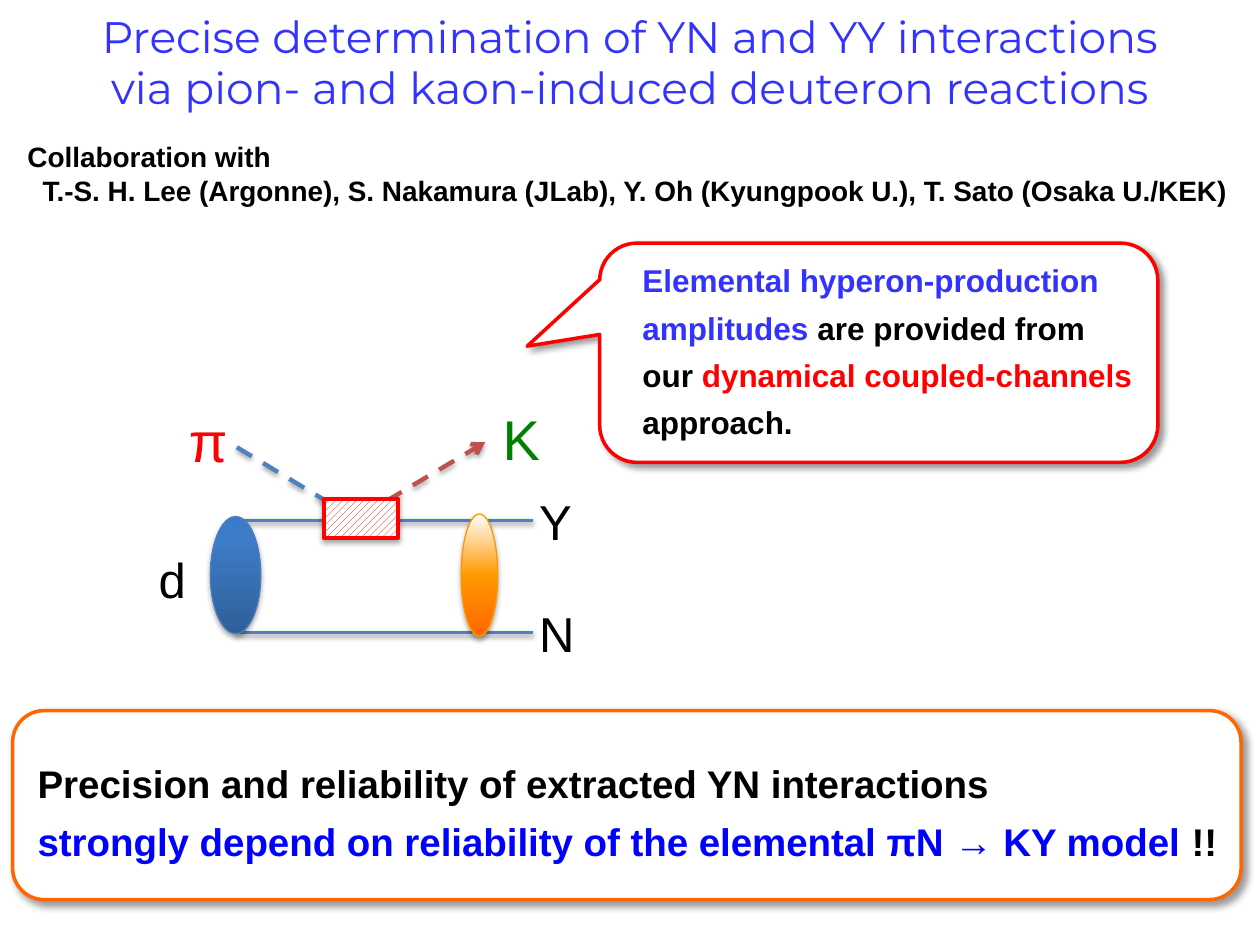
from copy import deepcopy

from lxml.etree import SubElement
from pptx import Presentation
from pptx.dml.color import RGBColor
from pptx.enum.dml import MSO_LINE, MSO_PATTERN
from pptx.enum.shapes import MSO_CONNECTOR, MSO_SHAPE
from pptx.enum.text import MSO_ANCHOR, MSO_AUTO_SIZE, PP_ALIGN
from pptx.oxml.ns import qn
from pptx.util import Emu, Inches, Pt

BLACK, WHITE, RED = "000000", "FFFFFF", "FF0000"
INDIGO, BLUE, GREEN = "3333FF", "0000FF", "008000"
ORANGE, AMBER = "FF6600", "FF9900"
STEEL, BRICK = "4F81BD", "C0504D"

TITLE = [[("Precise determination of YN and YY interactions\n"
           "via pion- and kaon-induced deuteron reactions", INDIGO)]]
COLLABORATORS = [
    [("Collaboration with", BLACK)],
    [("T.-S. H. Lee (Argonne), S. Nakamura (JLab), Y. Oh (Kyungpook U.), "
      "T. Sato (Osaka U./KEK)", BLACK)],
]
AMPLITUDES = [
    [("Elemental hyperon-production", INDIGO)],
    [("amplitudes ", INDIGO), ("are provided from", BLACK)],
    [("our ", BLACK), ("dynamical coupled-channels", RED)],
    [("approach.", BLACK)],
]
CONCLUSION = [
    [("Precision and reliability of extracted YN interactions", BLACK)],
    [("strongly depend on reliability of the elemental πN → KY model", BLUE),
     (" !!", BLACK)],
]
PARTICLES = [
    ("Y", (4.18, 3.85, 0.46, 0.57), 28, BLACK),
    ("N", (4.18, 4.74, 0.49, 0.57), 28, BLACK),
    ("d", (1.16, 4.31, 0.42, 0.57), 28, BLACK),
    ("K", (3.89, 3.16, 0.5, 0.64), 32, GREEN),
    ("π", (1.4, 3.18, 0.45, 0.64), 32, RED),
]
BARYON_LEVELS = (4.13, 5.02)
BARYON_START, BARYON_END = 1.87, 4.23
PION_PATH = (1.88, 3.55, 2.86, 4.14)
KAON_PATH = (2.86, 4.1, 3.85, 3.51)
DEUTERON_STOPS = [(0, "2F5F99"), (80, "3D7CC7"), (100, "3A7CCB")]
RESCATTERING_STOPS = [(0, ORANGE), (50, AMBER), (100, WHITE)]

PANEL_SHADOW = dict(alpha=40, blur=4, distance=3, angle=45)
LINE_SHADOW = dict(alpha=38, blur=3.1, distance=1.6, angle=90)
VERTEX_SHADOW = dict(alpha=35, blur=3.1, distance=1.8, angle=90)

deck = Presentation()
deck.slide_width, deck.slide_height = Inches(10), Inches(7.5)
slide = deck.slides.add_slide(deck.slide_layouts[5])


def color(code):
    return RGBColor.from_string(code)


def place(item, box):
    item.left, item.top, item.width, item.height = map(Inches, box)


def add_shadow(item, alpha, blur, distance, angle):
    effects = SubElement(item._element.spPr, qn("a:effectLst"))
    shadow = SubElement(effects, qn("a:outerShdw"), blurRad=str(Pt(blur)),
                        dist=str(Pt(distance)), dir=str(angle * 60000), rotWithShape="0")
    tone = SubElement(shadow, qn("a:srgbClr"), val=BLACK)
    SubElement(tone, qn("a:alpha"), val=str(alpha * 1000))


def write(frame, paragraphs, size, font="Arial", bold=False, spacing=None,
          align=PP_ALIGN.LEFT, indents=()):
    for index, runs in enumerate(paragraphs):
        paragraph = frame.paragraphs[0] if index == 0 else frame.add_paragraph()
        paragraph.alignment = align
        if spacing:
            paragraph.line_spacing = spacing
        if index < len(indents):
            paragraph._p.get_or_add_pPr().set("marL", str(Inches(indents[index])))
        for text, tone in runs:
            for part, line in enumerate(text.split("\n")):
                if part:
                    paragraph.add_line_break()
                    paragraph._p[-1].append(deepcopy(run._r.rPr))
                run = paragraph.add_run()
                run.text = line
                run.font.name, run.font.size, run.font.bold = font, Pt(size), bold
                run.font.color.rgb = color(tone)


def add_text(paragraphs, box, **style):
    frame = slide.shapes.add_textbox(*map(Inches, box)).text_frame
    frame.word_wrap = False
    frame.auto_size = MSO_AUTO_SIZE.SHAPE_TO_FIT_TEXT
    write(frame, paragraphs, **style)


def add_outlined(kind, box, outline, width, shadow):
    item = slide.shapes.add_shape(kind, *map(Inches, box))
    item.fill.solid()
    item.fill.fore_color.rgb = color(WHITE)
    item.line.color.rgb = color(outline)
    item.line.width = Pt(width)
    add_shadow(item, **shadow)
    return item


def add_blob(box, stops, outline):
    blob = add_outlined(MSO_SHAPE.OVAL, box, outline, 0.75, VERTEX_SHADOW)
    blob.fill.gradient()
    blob.fill.gradient_angle = 90
    stop_list = blob._element.spPr.find(".//" + qn("a:gsLst"))
    for stop in list(stop_list):
        stop_list.remove(stop)
    for position, tone in stops:
        stop = SubElement(stop_list, qn("a:gs"), pos=str(position * 1000))
        SubElement(stop, qn("a:srgbClr"), val=tone)


def add_line(path_points, tone, width=2, meson=False, shadow=LINE_SHADOW):
    line = slide.shapes.add_connector(MSO_CONNECTOR.STRAIGHT, *map(Inches, path_points))
    line.line.color.rgb = color(tone)
    line.line.width = Pt(width)
    if meson:
        line.line.dash_style = MSO_LINE.DASH
        SubElement(line.line._get_or_add_ln(), qn("a:tailEnd"), type="arrow")
    add_shadow(line, **shadow)


title = slide.shapes.title
place(title, (0, 0, 10, 1.01))
title.text_frame.vertical_anchor = MSO_ANCHOR.MIDDLE
write(title.text_frame, TITLE, size=25.2, font="Montserrat", spacing=0.97,
      align=PP_ALIGN.CENTER)
add_text(COLLABORATORS, (0.12, 1.06, 9.86, 0.64), size=16, bold=True, indents=(0, 0.12))

callout = add_outlined(MSO_SHAPE.ROUNDED_RECTANGULAR_CALLOUT, (4.76, 1.93, 4.43, 1.74),
                       RED, 2, PANEL_SHADOW)
for index, value in enumerate((-0.63, -0.03, 0.17)):
    callout.adjustments[index] = value
add_text(AMPLITUDES, (5, 1.95, 4.2, 1.62), size=18, bold=True, spacing=1.25)

for level in BARYON_LEVELS:
    add_line((BARYON_START, level, BARYON_END, level), STEEL)
add_line(PION_PATH, STEEL, width=2.5, meson=True)
add_blob((3.66, 4.08, 0.29, 0.97), RESCATTERING_STOPS, AMBER)
add_line(KAON_PATH, BRICK, width=2.5, meson=True, shadow=VERTEX_SHADOW)

vertex = add_outlined(MSO_SHAPE.RECTANGLE, (2.57, 3.96, 0.59, 0.31), RED, 2, VERTEX_SHADOW)
vertex.fill.patterned()
vertex.fill.pattern = MSO_PATTERN.WIDE_UPWARD_DIAGONAL
vertex.fill.fore_color.rgb = color(RED)
vertex.fill.back_color.rgb = color(WHITE)
add_blob((1.67, 4.1, 0.4, 0.93), DEUTERON_STOPS, "4B7EBC")
for symbol, box, size, tone in PARTICLES:
    add_text([[(symbol, tone)]], box, size=size)

add_outlined(MSO_SHAPE.ROUNDED_RECTANGLE, (0.1, 5.64, 9.75, 1.5), ORANGE, 2, PANEL_SHADOW)
add_text(CONCLUSION, (0.2, 5.89, 9.62, 1.03), size=22, bold=True, spacing=1.25)

deck.save("out.pptx")
